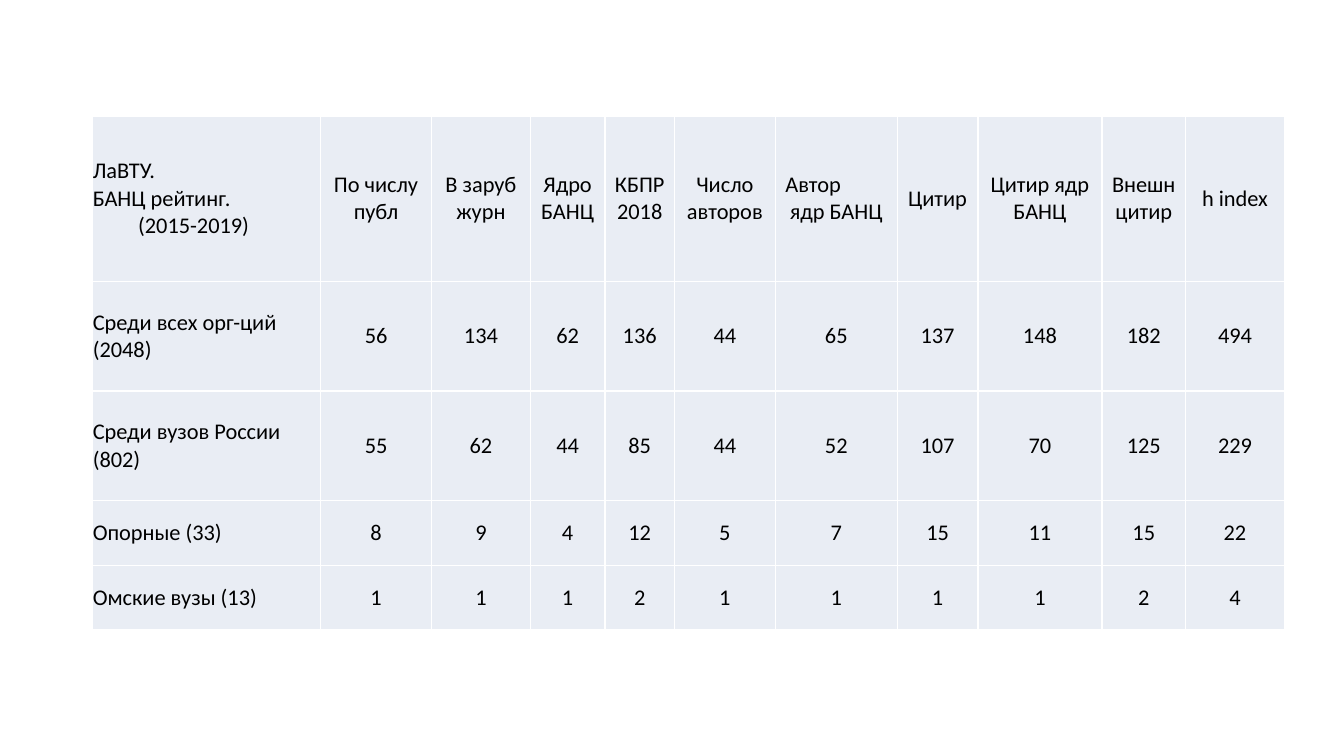
"""Build a slide with a table of university citation rankings."""
from lxml.etree import SubElement
from pptx import Presentation
from pptx.dml.color import RGBColor
from pptx.enum.text import MSO_ANCHOR, PP_ALIGN
from pptx.oxml.ns import qn
from pptx.util import Inches, Pt

COLORS = {"text": "000000", "cell": "E9EDF4", "border": "FFFFFF"}
COLUMN_WIDTHS = [2.26, 1.1, 0.98, 0.74, 0.69, 1, 1.21, 0.8, 1.23, 0.83, 0.98]
ROW_HEIGHTS = [1.64, 1.09, 1.09, 0.64, 0.64]
INDENTS = {"(2015-2019)": 0.45, "Автор": 0.1}
RANKINGS = [
    ["ЛаВТУ.\nБАНЦ рейтинг.\n(2015-2019)", "По числу публ", "В заруб журн",
     "Ядро БАНЦ", "КБПР 2018", "Число авторов", "Автор\nядр БАНЦ", "Цитир",
     "Цитир ядр БАНЦ", "Внешн цитир", "h index"],
    ["Среди всех орг-ций (2048)", 56, 134, 62, 136, 44, 65, 137, 148, 182, 494],
    ["Cреди вузов России (802)", 55, 62, 44, 85, 44, 52, 107, 70, 125, 229],
    ["Опорные (33)", 8, 9, 4, 12, 5, 7, 15, 11, 15, 22],
    ["Омские вузы (13)", 1, 1, 1, 2, 1, 1, 1, 1, 2, 4],
]


def add_text(p, text, *, size=16, font="Calibri", color="text",
             align=PP_ALIGN.LEFT, indent=0):
    """Write a formatted run into a paragraph."""
    p.alignment = align
    if indent:
        p._p.get_or_add_pPr().set("marL", str(Inches(indent)))
    r = p.add_run()
    r.text = text
    r.font.size = Pt(size)
    r.font.name = font
    r.font.color.rgb = RGBColor.from_string(COLORS[color])


def set_borders(cell, width=1):
    """Draw a solid line on all four sides of a cell."""
    tc_pr = cell._tc.get_or_add_tcPr()
    for i, side in enumerate(("lnL", "lnR", "lnT", "lnB")):
        ln = tc_pr.makeelement(qn(f"a:{side}"), {"w": str(Pt(width))})
        fill = SubElement(ln, qn("a:solidFill"))
        SubElement(fill, qn("a:srgbClr"), val=COLORS["border"])
        tc_pr.insert(i, ln)


def fill_cell(cell, text, align):
    """Style a cell and write its lines of text."""
    cell.fill.solid()
    cell.fill.fore_color.rgb = RGBColor.from_string(COLORS["cell"])
    set_borders(cell)
    cell.vertical_anchor = MSO_ANCHOR.MIDDLE
    cell.margin_left = cell.margin_right = Inches(0)
    cell.margin_top = cell.margin_bottom = Inches(0)
    tf = cell.text_frame
    for i, line in enumerate(text.split("\n")):
        p = tf.add_paragraph() if i else tf.paragraphs[0]
        indent = INDENTS.get(line, 0)
        add_text(p, line, align=PP_ALIGN.LEFT if indent else align, indent=indent)


def add_rankings(s, left, top):
    """Add the table of rankings."""
    table = s.shapes.add_table(
        len(ROW_HEIGHTS), len(COLUMN_WIDTHS), Inches(left), Inches(top),
        Inches(sum(COLUMN_WIDTHS)), Inches(sum(ROW_HEIGHTS))).table
    for column, width in zip(table.columns, COLUMN_WIDTHS):
        column.width = Inches(width)
    for row, height, values in zip(table.rows, ROW_HEIGHTS, RANKINGS):
        row.height = Inches(height)
        for i, (cell, value) in enumerate(zip(row.cells, values)):
            fill_cell(cell, str(value), PP_ALIGN.CENTER if i else PP_ALIGN.LEFT)


def main():
    """Create and save the presentation."""
    prs = Presentation()
    prs.slide_width = Inches(13.33)
    prs.slide_height = Inches(7.5)
    s = prs.slides.add_slide(prs.slide_layouts[6])
    add_rankings(s, 0.92, 1.15)
    prs.save("out.pptx")


if __name__ == "__main__":
    main()
